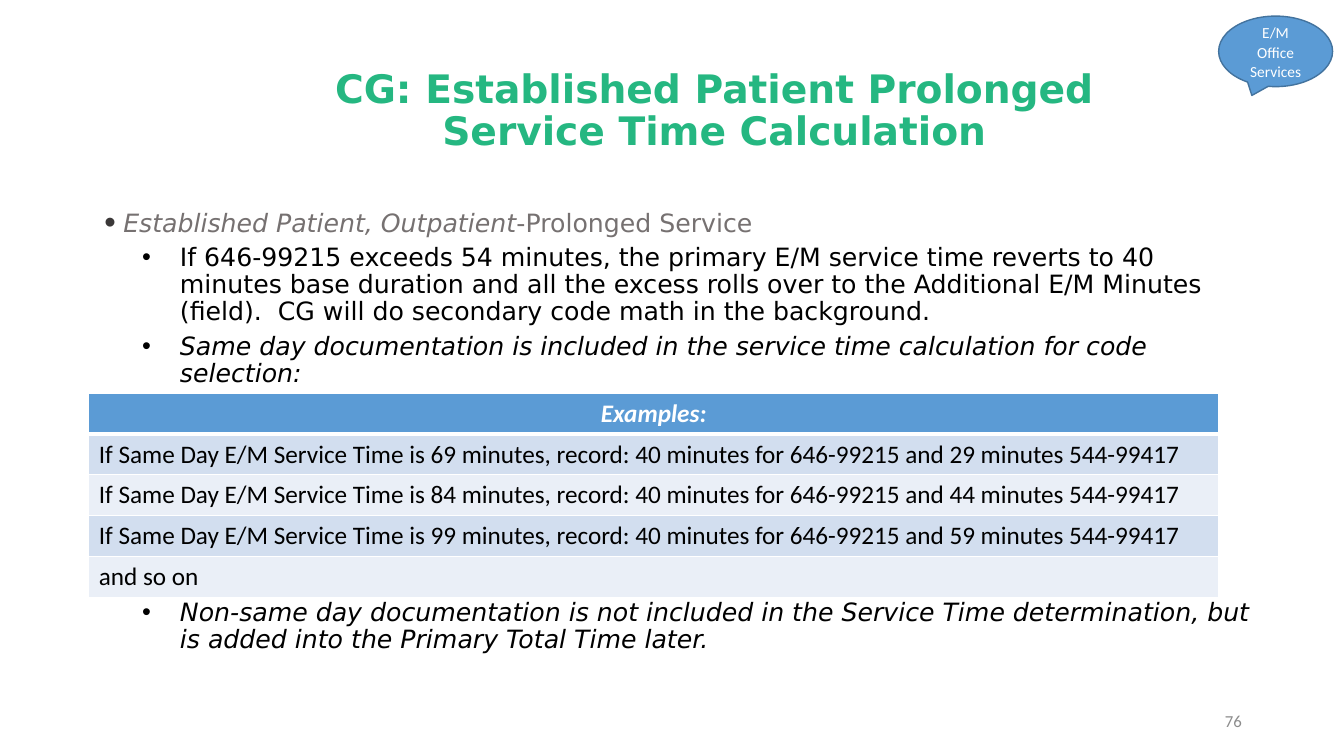
from lxml import etree
from pptx import Presentation
from pptx.dml.color import RGBColor
from pptx.enum.shapes import MSO_SHAPE
from pptx.enum.text import MSO_ANCHOR, PP_ALIGN
from pptx.oxml.ns import qn
from pptx.util import Pt

CENTER, LEFT, RIGHT = PP_ALIGN.CENTER, PP_ALIGN.LEFT, PP_ALIGN.RIGHT
TOP, MIDDLE = MSO_ANCHOR.TOP, MSO_ANCHOR.MIDDLE
CALLOUT = MSO_SHAPE.OVAL_CALLOUT

GREEN, GRAY, DARK, BLACK, WHITE = "25B781", "767171", "3B3838", "000000", "FFFFFF"
BLUE, NAVY, BAND, PALE, NUMBER_GRAY = "5B9BD5", "43739E", "D2DEEF", "EAEFF7", "8C8C8C"
HEADING = {"name": "DejaVu Sans", "size": Pt(28), "bold": True}
BODY = {"name": "DejaVu Sans", "size": Pt(18)}
ITALIC = {**BODY, "italic": True}
CELL = {"name": "Calibri", "size": Pt(18), "bold": False, "italic": False}
CELL_HEADER = {**CELL, "bold": True, "italic": True}
NUMBER = {"name": "Calibri", "size": Pt(12)}
LABEL = {"name": "Calibri", "size": Pt(11)}


def color(value):
    return RGBColor.from_string(value)


def apply(target, values):
    for name, value in values.items():
        setattr(target, name, value)


class SlideBuilder:
    def __init__(self, page):
        self.page = page

    def add_spans(self, para, spans, **layout):
        apply(para, layout)
        for text, style, ink in spans:
            span = para.add_run()
            span.text = text
            apply(span.font, style)
            span.font.color.rgb = color(ink)

    def text_box(self, left, top, width, height, anchor=TOP):
        frame = self.page.shapes.add_textbox(Pt(left), Pt(top), Pt(width), Pt(height)).text_frame
        apply(frame, {"word_wrap": True, "vertical_anchor": anchor})
        return frame

    def bullet(self, para, margin, indent, ink=None, percent=100):
        properties = para._p.get_or_add_pPr()
        properties.set("marL", str(Pt(margin)))
        properties.set("indent", str(Pt(indent)))
        if ink:
            holder = etree.SubElement(properties, qn("a:buClr"))
            etree.SubElement(holder, qn("a:srgbClr"), val=ink)
        etree.SubElement(properties, qn("a:buSzPct"), val=str(percent * 1000))
        etree.SubElement(properties, qn("a:buFont"), typeface="Arial")
        etree.SubElement(properties, qn("a:buChar"), char="•")

    def borders(self, cell, widths):
        properties = cell._tc.get_or_add_tcPr()
        for side, width in zip("LRTB", widths):
            line = etree.SubElement(properties, qn(f"a:ln{side}"), w=str(Pt(width)))
            fill = etree.SubElement(line, qn("a:solidFill"))
            etree.SubElement(fill, qn("a:srgbClr"), val=WHITE)

    def table(self, left, top, width, row_height, header, lines):
        texts = [header, *lines]
        table = self.page.shapes.add_table(
            len(texts), 1, Pt(left), Pt(top), Pt(width), Pt(row_height * len(texts))
        ).table
        for index, text in enumerate(texts):
            first = index == 0
            cell = table.cell(index, 0)
            self.borders(cell, (1, 1, 3 if index == 1 else 1, 3 if first else 1))
            cell.fill.solid()
            cell.fill.fore_color.rgb = color(BLUE if first else BAND if index % 2 else PALE)
            style, ink = (CELL_HEADER, WHITE) if first else (CELL, BLACK)
            self.add_spans(cell.text_frame.paragraphs[0], [(text, style, ink)],
                           alignment=CENTER if first else LEFT)

    def callout(self, left, top, width, height, text):
        shape = self.page.shapes.add_shape(CALLOUT, Pt(left), Pt(top), Pt(width), Pt(height))
        shape.shadow.inherit = False
        shape.fill.solid()
        shape.fill.fore_color.rgb = color(BLUE)
        shape.line.color.rgb = color(NAVY)
        shape.line.width = Pt(1)
        apply(shape.text_frame, {"word_wrap": True, "vertical_anchor": MIDDLE})
        self.add_spans(shape.text_frame.paragraphs[0], [(text, LABEL, WHITE)],
                       alignment=CENTER, line_spacing=1.07, space_after=Pt(8))


def main():
    deck = Presentation()
    deck.slide_width, deck.slide_height = Pt(960), Pt(540)
    builder = SlideBuilder(deck.slides.add_slide(deck.slide_layouts[6]))

    title = builder.text_box(222.5, 46, 575.3, 68.4)
    builder.add_spans(
        title.paragraphs[0],
        [("CG: Established Patient Prolonged Service Time Calculation", HEADING, GREEN)],
        alignment=CENTER, line_spacing=0.9,
    )

    body = builder.text_box(56.9, 148.3, 846, 326.2)
    body.margin_left = Pt(8.64)
    topic = body.paragraphs[0]
    builder.add_spans(
        topic,
        [("Established Patient, Outpatient", ITALIC, GRAY), ("-Prolonged Service", BODY, GRAY)],
        line_spacing=Pt(18),
    )
    builder.bullet(topic, 22.5, -13.5, DARK, 130)
    rules = [
        ("If 646-99215 exceeds 54 minutes, the primary E/M service time reverts to 40 minutes "
         "base duration and all the excess rolls over to the Additional E/M Minutes (field).  "
         "CG will do secondary code math in the background.", BODY, 5),
        ("Same day documentation is included in the service time calculation for code "
         "selection:", ITALIC, 5),
        ("Non-same day documentation is not included in the Service Time determination, but "
         "is added into the Primary Total Time later.", ITALIC, 151.5),
    ]
    for text, style, gap in rules:
        para = body.add_paragraph()
        builder.add_spans(para, [(text, style, BLACK)],
                          level=1, line_spacing=0.9, space_before=Pt(gap))
        builder.bullet(para, 63, -27)

    number = builder.text_box(678.2, 500.4, 216, 28.8, MIDDLE)
    builder.add_spans(number.paragraphs[0], [("76", NUMBER, NUMBER_GRAY)], alignment=RIGHT)

    base = 40
    examples = [
        f"If Same Day E/M Service Time is {total} minutes, record: {base} minutes for 646-99215 "
        f"and {total - base} minutes 544-99417"
        for total in (69, 84, 99)
    ]
    builder.table(63.4, 280.8, 807.1, 29.2, "Examples:", [*examples, "and so on"])
    builder.callout(870.5, 11.5, 81.4, 50.4, "E/M Office Services")
    deck.save("out.pptx")


if __name__ == "__main__":
    main()
